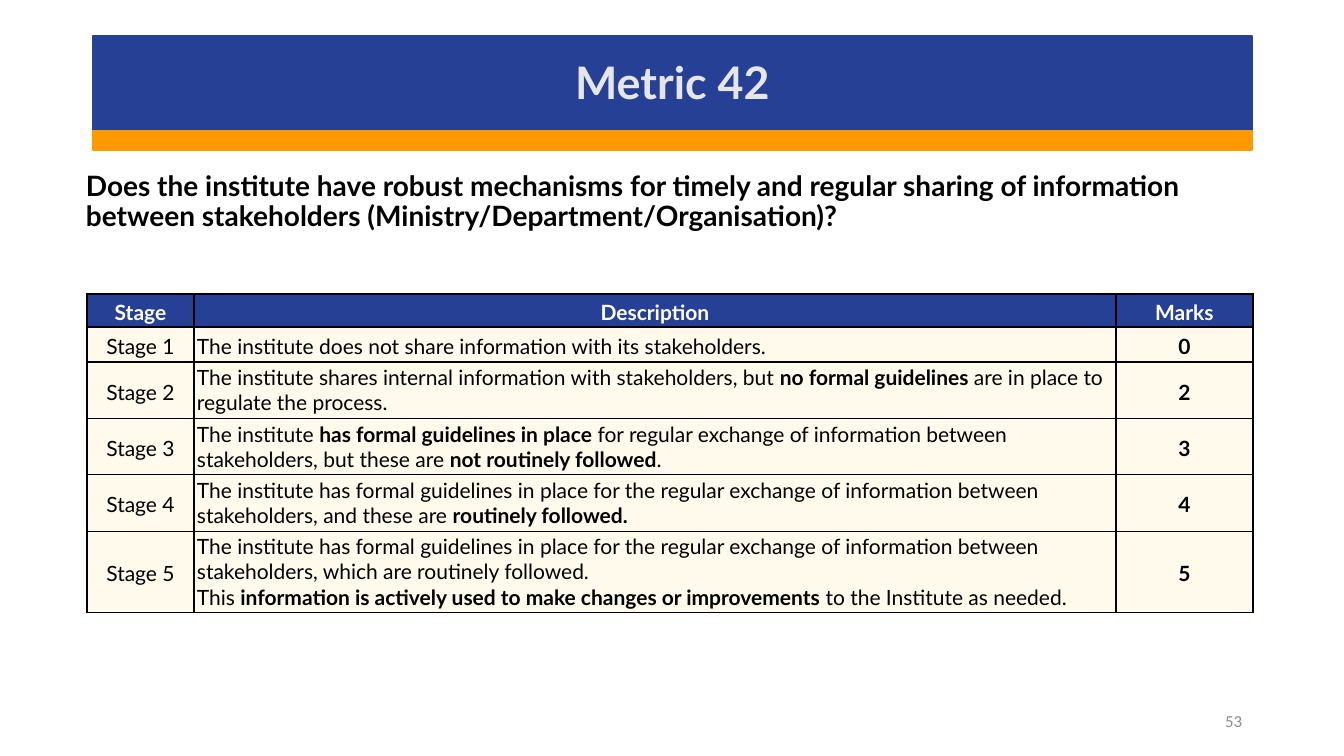
from dataclasses import dataclass

from lxml import etree
from pptx import Presentation
from pptx import util as u
from pptx.dml.color import RGBColor
from pptx.enum import shapes, text
from pptx.oxml import ns

EMU_PER_PX = 914400 / 100.8


@dataclass(frozen=True)
class Theme:
    blue: str = "254094"
    orange: str = "FF9900"
    cream: str = "FFFAEB"
    white: str = "FFFFFF"
    black: str = "000000"
    pale: str = "E7E6E6"
    grey: str = "8C8C8C"
    face: str = "Lato"
    number_face: str = "Calibri"
    title_size: int = 32
    question_size: int = 20
    table_size: int = 15
    number_size: int = 12


THEME = Theme()
CENTER = text.PP_ALIGN.CENTER
LEFT = text.PP_ALIGN.LEFT
RIGHT = text.PP_ALIGN.RIGHT
MIDDLE = text.MSO_ANCHOR.MIDDLE
BOTTOM = text.MSO_ANCHOR.BOTTOM

COLUMN_WIDTHS = (107, 922, 137)
ROW_HEIGHTS = (33, 35, 56, 56, 56, 81)
HEADINGS = ("Stage", "Description", "Marks")
PRACTICE = "The institute has formal guidelines in place for the regular exchange of information between stakeholders, "
STAGES = (
    ("0", [[("The institute does not share information with its stakeholders.", False)]]),
    ("2", [[("The institute shares internal information with stakeholders, but ", False),
            ("no formal guidelines ", True),
            ("are in place to regulate the process.", False)]]),
    ("3", [[("The institute ", False),
            ("has formal guidelines in place ", True),
            ("for regular exchange of information between stakeholders, but these are ", False),
            ("not routinely followed", True),
            (".", False)]]),
    ("4", [[(PRACTICE + "and these are ", False), ("routinely followed.", True)]]),
    ("5", [[(PRACTICE + "which are routinely followed.", False)],
           [("This ", False),
            ("information is actively used to make changes or improvements ", True),
            ("to the Institute as needed.", False)]]),
)


def px(length):
    return u.Emu(round(length * EMU_PER_PX))


def color(value):
    return RGBColor.from_string(value)


def write(frame, paragraphs, size, ink, face=THEME.face, align=LEFT, spacing=1.0):
    for index, runs in enumerate(paragraphs):
        paragraph = frame.add_paragraph() if index else frame.paragraphs[0]
        paragraph.alignment = align
        paragraph.line_spacing = spacing
        paragraph.space_before = u.Pt(0)
        for words, bold in runs:
            run = paragraph.add_run()
            run.text = words
            run.font.name = face
            run.font.size = u.Pt(size)
            run.font.bold = bold
            run.font.color.rgb = color(ink)


def add_band(slide, top, height, fill):
    band = slide.shapes.add_shape(
        shapes.MSO_SHAPE.RECTANGLE, px(93), px(top), px(1159), px(height))
    band.shadow.inherit = False
    band.fill.solid()
    band.fill.fore_color.rgb = color(fill)
    band.line.color.rgb = color(fill)
    band.line.width = u.Pt(1)


def set_title(slide, words):
    title = slide.shapes.title
    title.left, title.top, title.width, title.height = px(93), px(39), px(1159), px(92)
    title.text_frame.vertical_anchor = MIDDLE
    write(title.text_frame, [[(words, True)]], THEME.title_size, THEME.pale,
          align=CENTER, spacing=0.9)
    band_tree = title._element.getparent()
    band_tree.append(title._element)


def add_label(slide, box, words, size, ink, bold=False, anchor=text.MSO_ANCHOR.TOP, **style):
    frame = slide.shapes.add_textbox(*map(px, box)).text_frame
    frame.word_wrap = True
    frame.vertical_anchor = anchor
    write(frame, [[(words, bold)]], size, ink, **style)


def add_borders(cell):
    properties = cell._tc.get_or_add_tcPr()
    for index, side in enumerate(("lnL", "lnR", "lnT", "lnB")):
        border = etree.Element(ns.qn(f"a:{side}"), w=str(u.Pt(1)))
        solid = etree.SubElement(border, ns.qn("a:solidFill"))
        etree.SubElement(solid, ns.qn("a:srgbClr"), val=THEME.black)
        properties.insert(index, border)


def fill_cell(cell, paragraphs, fill, ink, inset, anchor=MIDDLE, align=CENTER, spacing=1.15):
    cell.fill.solid()
    cell.fill.fore_color.rgb = color(fill)
    cell.margin_left = cell.margin_right = px(inset)
    cell.margin_top = cell.margin_bottom = px(inset)
    cell.vertical_anchor = anchor
    write(cell.text_frame, paragraphs, THEME.table_size, ink, align=align, spacing=spacing)
    add_borders(cell)


def add_stages(slide):
    table = slide.shapes.add_table(
        len(ROW_HEIGHTS), len(COLUMN_WIDTHS), px(87), px(294),
        px(sum(COLUMN_WIDTHS)), px(sum(ROW_HEIGHTS))).table
    for column, width in zip(table.columns, COLUMN_WIDTHS):
        column.width = px(width)
    for row, height in zip(table.rows, ROW_HEIGHTS):
        row.height = px(height)
    for column, heading in enumerate(HEADINGS):
        fill_cell(table.cell(0, column), [[(heading, True)]], THEME.blue, THEME.white, 2)
    for number, (marks, description) in enumerate(STAGES, start=1):
        fill_cell(table.cell(number, 0), [[(f"Stage {number}", False)]],
                  THEME.cream, THEME.black, 3)
        fill_cell(table.cell(number, 1), description, THEME.cream, THEME.black, 3,
                  anchor=BOTTOM, align=LEFT, spacing=1.0)
        fill_cell(table.cell(number, 2), [[(marks, True)]], THEME.cream, THEME.black, 2)


def main():
    deck = Presentation()
    deck.slide_width, deck.slide_height = px(1344), px(756)
    slide = deck.slides.add_slide(deck.slide_layouts[5])
    add_band(slide, 36, 94, THEME.blue)
    add_band(slide, 131, 19, THEME.orange)
    add_label(slide, (76, 167, 1205, 155),
              "Does the institute have robust mechanisms for timely and regular sharing of "
              "information between stakeholders (Ministry/Department/Organisation)?",
              THEME.question_size, THEME.black, bold=True, spacing=0.9)
    add_stages(slide)
    add_label(slide, (950, 701, 302, 40), "53", THEME.number_size, THEME.grey,
              anchor=MIDDLE, face=THEME.number_face, align=RIGHT)
    set_title(slide, "Metric 42")
    deck.save("out.pptx")


if __name__ == "__main__":
    main()
